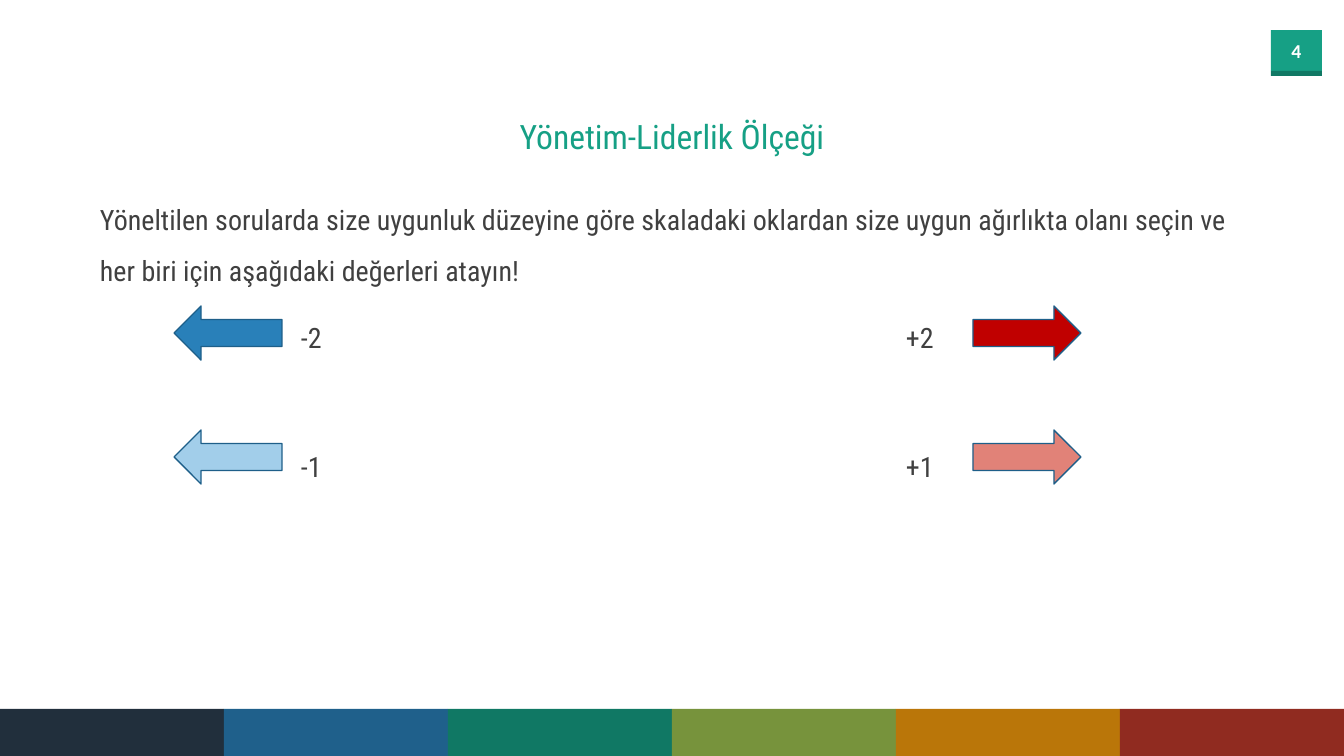
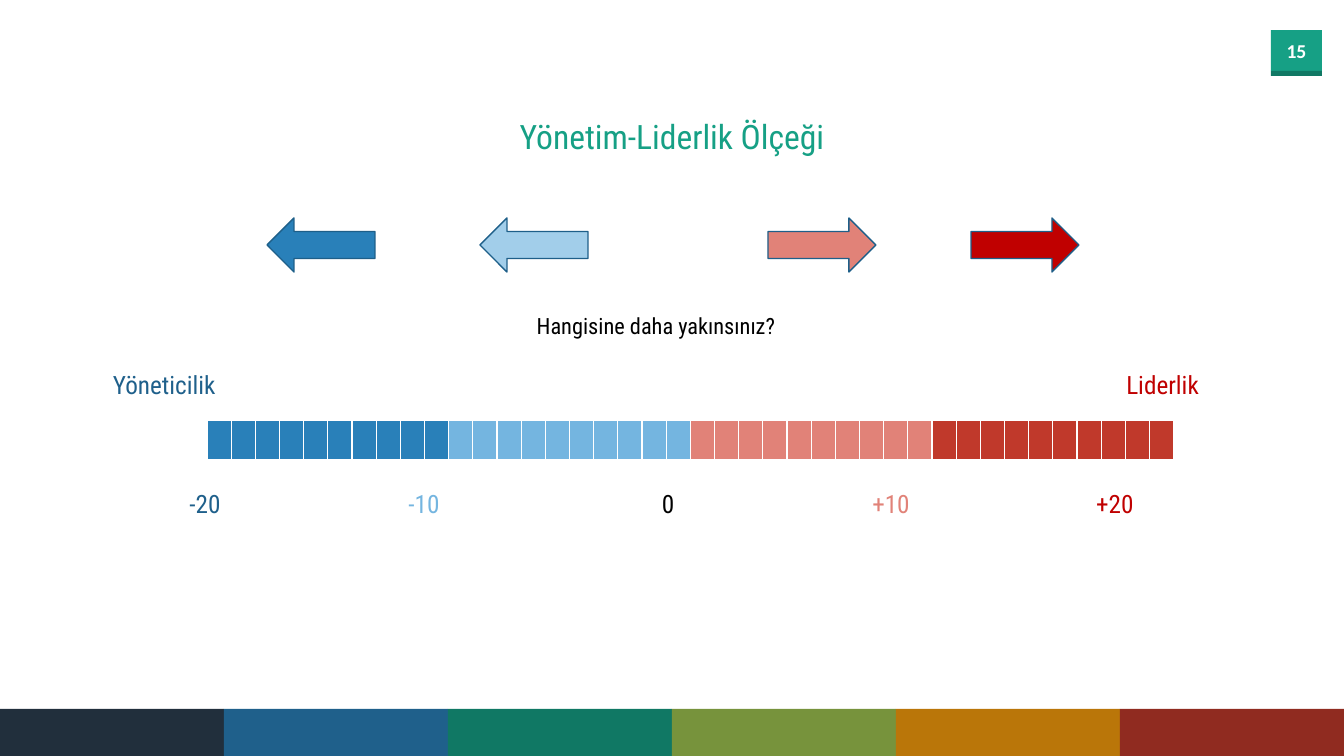
from lxml.etree import SubElement
from pptx import Presentation
from pptx.dml.color import RGBColor
from pptx.enum.shapes import MSO_SHAPE as SHAPE
from pptx.enum.text import MSO_ANCHOR as ANCHOR, PP_ALIGN as ALIGN
from pptx.oxml.ns import qn
from pptx.util import Emu, Pt

PX = 914400 / 100.8
WIDTH, HEIGHT = 1344, 756
ARROW_W, ARROW_H = 108, 54
FONT, NUMBER_FONT = "Roboto Condensed", "Calibri"

WHITE = RGBColor(0xFF, 0xFF, 0xFF)
BLACK = RGBColor(0x00, 0x00, 0x00)
GREY = RGBColor(0x40, 0x40, 0x40)
NAVY = RGBColor(0x21, 0x2F, 0x3C)
DARK_BLUE = RGBColor(0x1F, 0x60, 0x8B)
OUTLINE = RGBColor(0x1E, 0x5F, 0x89)
BLUE = RGBColor(0x29, 0x80, 0xB9)
SKY = RGBColor(0x74, 0xB5, 0xE0)
PALE_BLUE = RGBColor(0xA2, 0xCE, 0xEA)
GREEN = RGBColor(0x16, 0xA0, 0x85)
DARK_GREEN = RGBColor(0x10, 0x78, 0x64)
OLIVE = RGBColor(0x77, 0x93, 0x3C)
OCHRE = RGBColor(0xBA, 0x76, 0x09)
MAROON = RGBColor(0x90, 0x2B, 0x20)
PINK = RGBColor(0xE1, 0x82, 0x78)
BRICK = RGBColor(0xC0, 0x39, 0x2B)
RED = RGBColor(0xC0, 0x00, 0x00)

BAND = [NAVY, DARK_BLUE, DARK_GREEN, OLIVE, OCHRE, MAROON]
TITLE = "Yönetim-Liderlik Ölçeği"


def px(n):
    return Emu(round(n * PX))


def write(sp, text, size=18, color=BLACK, font=FONT, bold=False,
          align=ALIGN.CENTER, anchor=ANCHOR.MIDDLE, spacing=1.0, wrap=True):
    tf = sp.text_frame
    tf.word_wrap = wrap
    tf.vertical_anchor = anchor
    tf.margin_left = tf.margin_right = tf.margin_top = tf.margin_bottom = 0
    p = tf.paragraphs[0]
    p.alignment = align
    p.line_spacing = spacing
    r = p.add_run()
    r.text = text
    r.font.name = font
    r.font.size = Pt(size)
    r.font.bold = bold
    r.font.color.rgb = color


def add_text(s, box, text, **fmt):
    sp = s.shapes.add_textbox(*map(px, box))
    write(sp, text, **fmt)


def add_block(s, box, fill, shape=SHAPE.RECTANGLE, line=None):
    sp = s.shapes.add_shape(shape, *map(px, box))
    sp.shadow.inherit = False
    sp.fill.solid()
    sp.fill.fore_color.rgb = fill
    if line is None:
        sp.line.fill.background()
    else:
        sp.line.color.rgb = line
        sp.line.width = Pt(1)
    return sp


def add_arrow(s, x, y, fill, leftward):
    shape = SHAPE.LEFT_ARROW if leftward else SHAPE.RIGHT_ARROW
    add_block(s, (x, y, ARROW_W, ARROW_H), fill, shape, OUTLINE)


def add_band(s, box):
    x, y, w, h = box
    step = w // len(BAND)
    for i, color in enumerate(BAND):
        add_block(s, (x + i * step, y, step, h), color)


def add_page_number(s, box, number):
    x, y, w, h = box
    edge = 5
    sp = add_block(s, (x, y, w, h - edge), GREEN)
    write(sp, str(number), size=14, color=WHITE, font=NUMBER_FONT, bold=True, wrap=False)
    add_block(s, (x, y + h - edge, w, edge), DARK_GREEN)


def add_title(s, box):
    sp = s.shapes.title
    sp.left, sp.top, sp.width, sp.height = map(px, box)
    write(sp, TITLE, size=24, color=GREEN, spacing=0.9)


def add_base(prs, number):
    s = prs.slides.add_slide(prs.slide_layouts[5])
    add_band(s, (0, 709, WIDTH, 47))
    add_page_number(s, (1271, 30, 51, 46), number)
    add_title(s, (448, 117, 448, 43))
    return s


def add_key(s, box):
    x, y, w, h = box
    rows = [("-2", BLUE, "+2", RED, 31), ("-1", PALE_BLUE, "+1", PINK, 36)]
    for i, (minus, cold, plus, warm, mid) in enumerate(rows):
        top = y + i * (h - ARROW_H)
        add_arrow(s, x, top, cold, True)
        add_arrow(s, x + w - ARROW_W, top, warm, False)
        for left, label in ((x + 127, minus), (x + w - 175, plus)):
            add_text(s, (left, top + mid - 20, 50, 40), label, size=20, color=GREY, align=ALIGN.LEFT)


def add_arrow_row(s, box):
    x, y = box[:2]
    arrows = [(0, BLUE), (213, PALE_BLUE), (501, PINK), (704, RED)]
    for i, (dx, color) in enumerate(arrows):
        add_arrow(s, x + dx, y, color, i < 2)


def set_borders(cell):
    tcPr = cell._tc.get_or_add_tcPr()
    for i, (side, width) in enumerate((("L", 1), ("R", 1), ("T", 1), ("B", 3))):
        ln = SubElement(tcPr, qn("a:ln" + side), w=str(Pt(width)))
        fill = SubElement(ln, qn("a:solidFill"))
        SubElement(fill, qn("a:srgbClr"), val=str(WHITE))
        tcPr.insert(i, ln)


def add_scale(s, box):
    x, y, w, h = box
    groups = [BLUE, SKY, PINK, BRICK]
    per_group = 10
    count = len(groups) * per_group
    table = s.shapes.add_table(1, count, *map(px, box)).table
    table.first_row = table.horz_banding = False
    table.rows[0].height = px(h)
    for i in range(count):
        table.columns[i].width = px(w / count)
        cell = table.cell(0, i)
        cell.margin_left = cell.margin_right = cell.margin_top = cell.margin_bottom = 0
        cell.fill.solid()
        cell.fill.fore_color.rgb = groups[i // per_group]
        set_borders(cell)
    add_text(s, (x - 94, y - 56, 200, 40), "Yöneticilik", color=DARK_BLUE, align=ALIGN.LEFT)
    add_text(s, (x + w - 175, y - 56, 200, 40), "Liderlik", color=RED, align=ALIGN.RIGHT)
    marks = [("-20", -2, DARK_BLUE), ("-10", 217, SKY), ("0", 461, BLACK),
             ("+10", 684, PINK), ("+20", 908, RED)]
    for label, mid, color in marks:
        add_text(s, (x + mid - 40, y + 63, 80, 40), label, color=color)


def build_key_slide(prs):
    s = add_base(prs, 4)
    add_text(s, (100, 186, 1153, 110),
             "Yöneltilen sorularda size uygunluk düzeyine göre skaladaki oklardan size uygun "
             "ağırlıkta olanı seçin ve her biri için aşağıdaki değerleri atayın!",
             size=20, color=GREY, align=ALIGN.LEFT, anchor=ANCHOR.TOP, spacing=1.5)
    add_key(s, (174, 306, 907, 178))


def build_scale_slide(prs):
    s = add_base(prs, 15)
    add_arrow_row(s, (267, 218, 812, ARROW_H))
    add_text(s, (456, 306, 400, 40), "Hangisine daha yakınsınız?", size=16)
    add_scale(s, (207, 420, 967, 41))


def main():
    prs = Presentation()
    prs.slide_width, prs.slide_height = px(WIDTH), px(HEIGHT)
    build_key_slide(prs)
    build_scale_slide(prs)
    prs.save("out.pptx")


if __name__ == "__main__":
    main()
